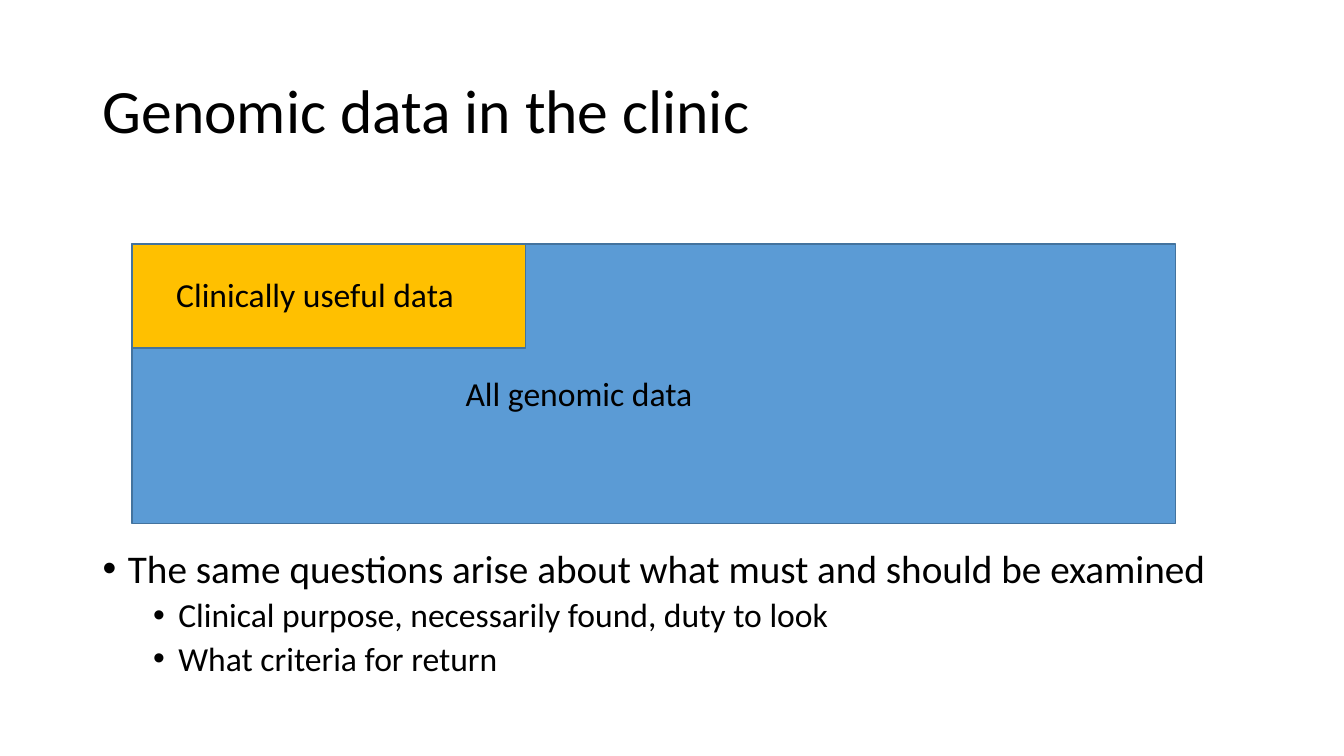
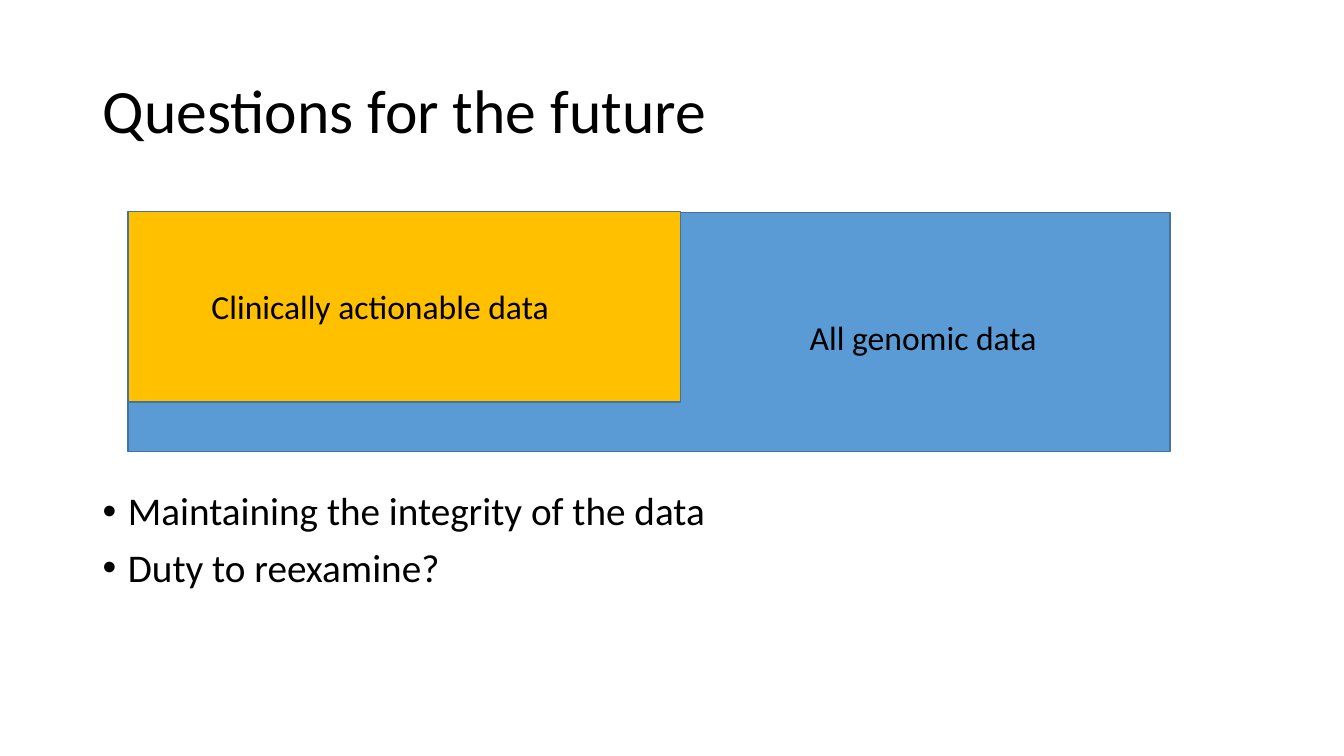
from dataclasses import dataclass

from lxml import etree
from pptx import Presentation
from pptx.dml.color import RGBColor
from pptx.enum import shapes, text
from pptx.oxml import ns
from pptx.util import Cm, Pt

# Shared look
FONT = "Calibri"
BLACK = RGBColor(0x00, 0x00, 0x00)
BLUE = RGBColor(0x5B, 0x9B, 0xD5)
GOLD = RGBColor(0xFF, 0xC0, 0x00)
EDGE = RGBColor(0x43, 0x73, 0x9E)
LEFT, WIDTH = 2.34, 29.21
FLOOR = 17.17  # bottom of the bullet area
HANG = 0.635
LEFT_AL = text.PP_ALIGN.LEFT


@dataclass(frozen=True)
class Box:
    x: float
    y: float
    w: float
    h: float

    def emu(self) -> tuple:
        return Cm(self.x), Cm(self.y), Cm(self.w), Cm(self.h)


@dataclass(frozen=True)
class Area:
    box: Box
    fill: RGBColor
    name: str
    label: Box
    align: text.PP_ALIGN = LEFT_AL


@dataclass(frozen=True)
class Point:
    words: str
    level: int = 0


@dataclass(frozen=True)
class Page:
    title: str
    areas: list[Area]
    top: float
    points: list[Point]


# Content
PAGES = [
    Page(
        "Genomic data in the clinic",
        [
            Area(Box(3.33, 6.15, 26.29, 7.04), BLUE, "All genomic data",
                 Box(7.54, 9.27, 14.1, 1.27), text.PP_ALIGN.CENTER),
            Area(Box(3.33, 6.15, 9.91, 2.62), GOLD, "Clinically useful data",
                 Box(4.19, 6.78, 8.15, 1.27)),
        ],
        13.72,
        [
            Point("The same questions arise about what must and should be examined"),
            Point("Clinical purpose, necessarily found, duty to look", 1),
            Point("What criteria for return", 1),
        ],
    ),
    Page(
        "Questions for the future",
        [
            Area(Box(3.23, 5.36, 26.26, 6.02), BLUE, "All genomic data",
                 Box(8.08, 7.87, 18.29, 1.27), text.PP_ALIGN.RIGHT),
            Area(Box(3.23, 5.33, 13.92, 4.8), GOLD, "Clinically actionable data",
                 Box(5.08, 7.09, 10.08, 1.27)),
        ],
        12.27,
        [
            Point("Maintaining the integrity of the data"),
            Point("Duty to reexamine?"),
        ],
    ),
]


# Text helpers
def add_frame(slide, box: Box, anchor=text.MSO_ANCHOR.TOP):
    frame = slide.shapes.add_textbox(*box.emu()).text_frame
    frame.word_wrap = True
    frame.vertical_anchor = anchor
    return frame


def add_run(para, words: str, size: int) -> None:
    run = para.add_run()
    run.text = words
    run.font.name = FONT
    run.font.size = Pt(size)
    run.font.color.rgb = BLACK


def set_bullet(para, level: int) -> None:
    props = para._p.get_or_add_pPr()
    props.set("marL", str(Cm(HANG * (1 + 2 * level))))
    props.set("indent", str(Cm(-HANG)))
    etree.SubElement(props, ns.qn("a:buFont")).set("typeface", "Arial")
    etree.SubElement(props, ns.qn("a:buChar")).set("char", "•")


# Slide parts
def add_title(slide, words: str) -> None:
    frame = add_frame(slide, Box(LEFT, 1.02, WIDTH, 3.68), text.MSO_ANCHOR.MIDDLE)
    para = frame.paragraphs[0]
    para.line_spacing = 0.9
    add_run(para, words, 44)


def add_area(slide, area: Area) -> None:
    rect = slide.shapes.add_shape(shapes.MSO_SHAPE.RECTANGLE, *area.box.emu())
    rect.shadow.inherit = False
    rect.fill.solid()
    rect.fill.fore_color.rgb = area.fill
    rect.line.color.rgb = EDGE
    rect.line.width = Pt(1)
    para = add_frame(slide, area.label).paragraphs[0]
    para.alignment = area.align
    add_run(para, area.name, 24)


def add_points(slide, top: float, points: list[Point]) -> None:
    frame = add_frame(slide, Box(LEFT, top, WIDTH, FLOOR - top))
    for i, point in enumerate(points):
        para = frame.add_paragraph() if i else frame.paragraphs[0]
        para.level = point.level
        para.line_spacing = 0.9
        para.space_before = Pt(5 if point.level else 10)
        set_bullet(para, point.level)
        add_run(para, point.words, 24 if point.level else 28)


def main() -> None:
    deck = Presentation()
    deck.slide_width, deck.slide_height = Cm(33.87), Cm(19.05)
    for page in PAGES:
        slide = deck.slides.add_slide(deck.slide_layouts[6])
        add_title(slide, page.title)
        for area in page.areas:
            add_area(slide, area)
        add_points(slide, page.top, page.points)
    deck.save("out.pptx")


if __name__ == "__main__":
    main()
